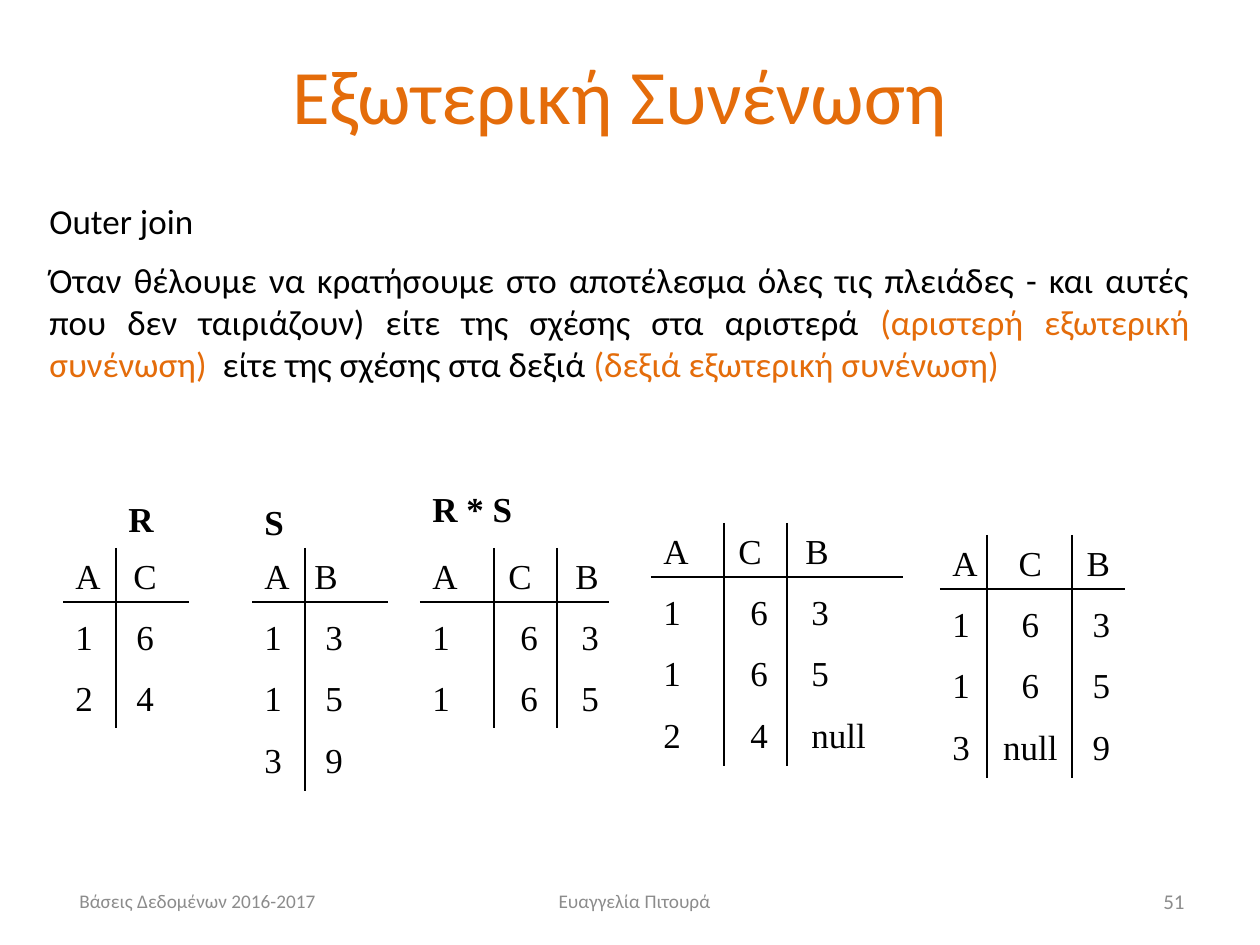
from lxml.etree import SubElement
from pptx import Presentation
from pptx.dml.color import RGBColor
from pptx.enum.shapes import MSO_CONNECTOR as Conn
from pptx.enum.text import MSO_ANCHOR as Anchor, PP_ALIGN as Align
from pptx.oxml.ns import qn
from pptx.util import Pt

PX = 914400 / 126
BLACK = RGBColor(0x00, 0x00, 0x00)
ORANGE = RGBColor(0xE4, 0x6C, 0x0A)
GREY = RGBColor(0x8C, 0x8C, 0x8C)
SERIF = dict(name="Times New Roman", size=Pt(20))
SANS = dict(name="Calibri", size=Pt(20))


def write(shape, paras, font, gap=0, align=Align.LEFT, anchor=Anchor.TOP):
    """Fill a shape with paragraphs, each a list of (text, colour) runs."""
    frame = shape.text_frame
    frame.word_wrap = True
    frame.vertical_anchor = anchor
    for i, runs in enumerate(paras):
        para = frame.paragraphs[0] if i == 0 else frame.add_paragraph()
        para.alignment = align
        para.space_before = Pt(gap)
        for text, color in runs:
            run = para.add_run()
            run.text = text
            for key, value in font.items():
                setattr(run.font, key, value)
            run.font.color.rgb = color


def rule(shapes, *ends):
    """Draw a thin black line between two points given in px."""
    line = shapes.add_connector(Conn.STRAIGHT, *[int(v * PX) for v in ends])
    line.line.color.rgb = BLACK
    line.line.width = Pt(0.75)
    SubElement(line._element.spPr, qn("a:effectLst"))


prs = Presentation()
prs.slide_width, prs.slide_height = int(1260 * PX), int(945 * PX)
slide = prs.slides.add_slide(prs.slide_layouts[5])
shapes = slide.shapes

# Title
title = shapes.title
for key, value in dict(left=53, top=15, width=1134, height=158).items():
    setattr(title, key, int(value * PX))
write(title, [[("Εξωτερική Συνένωση", ORANGE)]], dict(SANS, size=Pt(44)),
      align=Align.CENTER, anchor=Anchor.MIDDLE)

# Explanation
body = shapes.add_textbox(*[int(v * PX) for v in (37, 193, 1165, 204)])
write(body, [
    [("Outer join", BLACK)],
    [("Όταν θέλουμε να κρατήσουμε στο αποτέλεσμα όλες τις πλειάδες - και αυτές "
      "που δεν ταιριάζουν) είτε της σχέσης στα αριστερά ", BLACK),
     ("(αριστερή εξωτερική συνένωση)  ", ORANGE),
     ("είτε της σχέσης στα δεξιά ", BLACK),
     ("(δεξιά εξωτερική συνένωση)", ORANGE)],
], SANS, gap=10, align=Align.JUSTIFY)

# Names of the relations
for text, left, top, width in [("R", 116, 491, 39), ("S", 252, 494, 53),
                               ("R * S", 420, 481, 199)]:
    box = shapes.add_textbox(*[int(v * PX) for v in (left, top, width, 54)])
    write(box, [[(text, BLACK)]], dict(SERIF, bold=True), gap=11)

# Relations: left, top, box width, rule width, column lines,
# tab stops of the head, tab stops of the rows, tab alignment, rows
RELATIONS = [
    (63, 548, 126, 126, [53], [58], [61], "l", ["Α C", "1 6", "2 4"]),
    (252, 548, 168, 136, [53], [50], [61], "l", ["Α B", "1 3", "1 5", "3 9"]),
    (420, 548, 368, 189, [74, 137], [76, 143], [88, 149], "l",
     ["Α C B", "1 6 3", "1 6 5"]),
    (651, 523, 368, 252, [73, 136], [75, 142], [87, 148], "l",
     ["Α C B", "1 6 3", "1 6 5", "2 4 null"]),
    (940, 535, 231, 185, [47, 132], [78, 146], [78, 149], "ctr",
     ["Α C B", "1 6 3", "1 6 5", "3 null 9"]),
]
for left, top, wide, span, cols, head, stops, algn, rows in RELATIONS:
    group = shapes.add_group_shape().shapes
    high = 180 if len(rows) == 3 else 243
    box = group.add_textbox(*[int(v * PX) for v in (left, top, wide, high)])
    write(box, [[(row.replace(" ", "\t"), BLACK)] for row in rows], SERIF, gap=11)
    for i, para in enumerate(box.text_frame.paragraphs):
        tabs = SubElement(para._p.get_or_add_pPr(), qn("a:tabLst"))
        for stop in stops if i else head:
            SubElement(tabs, qn("a:tab"), pos=str(int(stop * PX)), algn=algn)
    rule(group, left, top + 54, left + span, top + 54)
    for col in cols:
        rule(group, left + col, top, left + col, top + high)

# Footer
for text, left, width, size, align in [
        ("Βάσεις Δεδομένων 2016-2017", 67, 294, 11, Align.LEFT),
        ("Ευαγγελία Πιτουρά", 435, 399, 11, Align.CENTER),
        ("51", 903, 294, 12, Align.RIGHT)]:
    box = shapes.add_textbox(*[int(v * PX) for v in (left, 876, width, 50)])
    write(box, [[(text, GREY)]], dict(SANS, size=Pt(size)),
          align=align, anchor=Anchor.MIDDLE)

prs.save("out.pptx")
